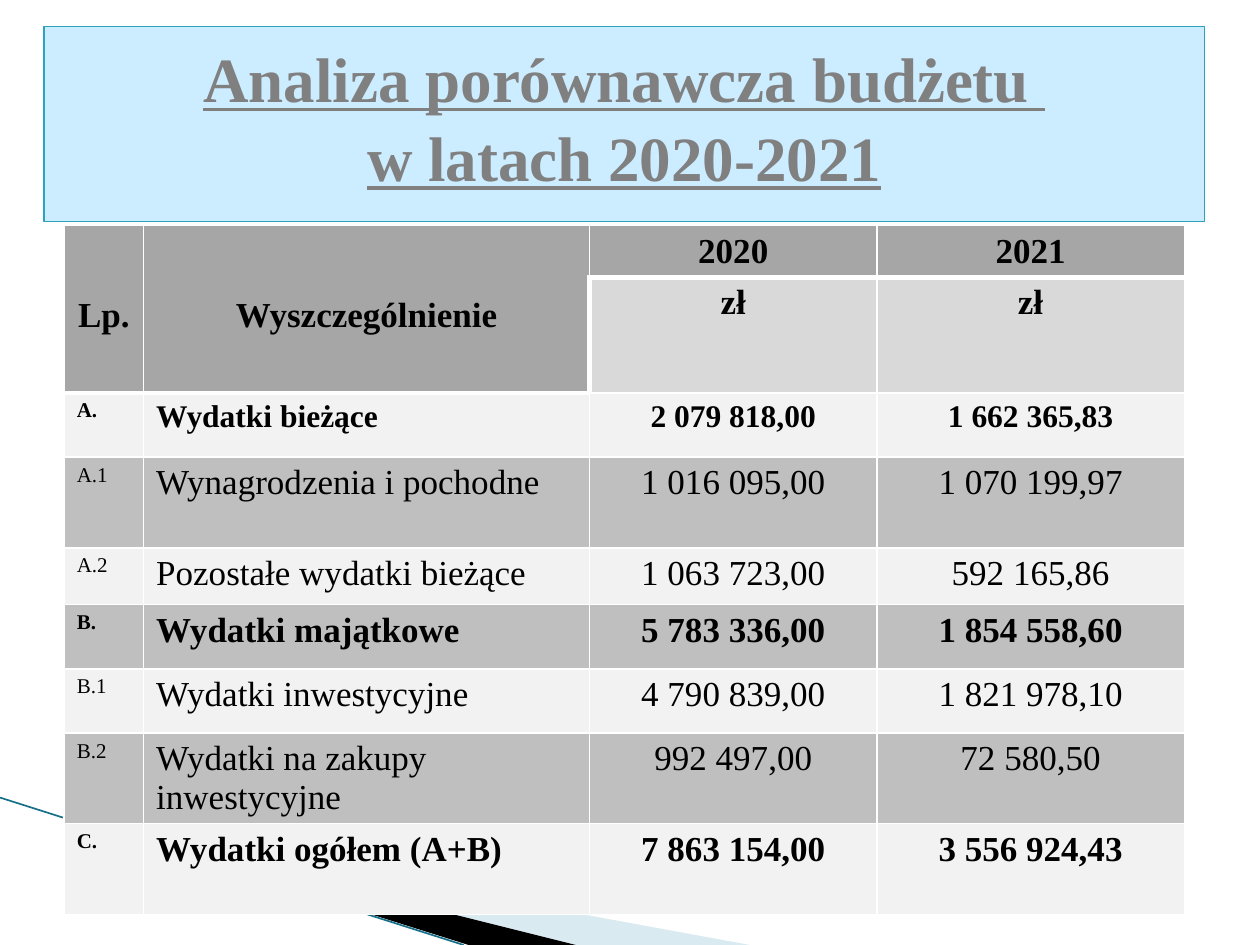
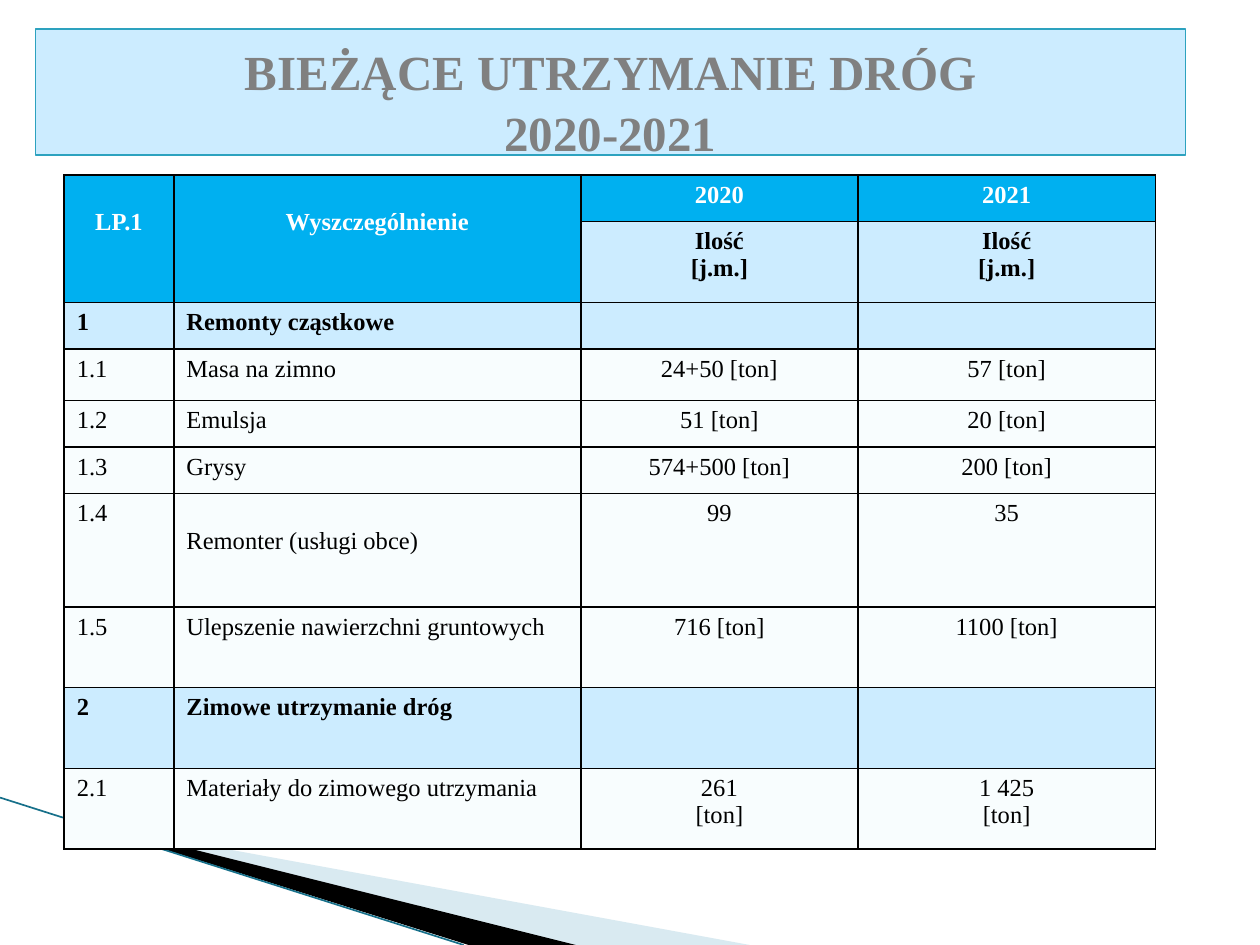
from dataclasses import dataclass
from itertools import product

from lxml import etree
from pptx import Presentation
from pptx.dml.color import RGBColor
from pptx.enum.shapes import MSO_CONNECTOR as CONN, MSO_SHAPE as SHAPE
from pptx.enum.text import MSO_ANCHOR as ANCHOR, PP_ALIGN as ALIGN
from pptx.oxml.ns import qn
from pptx.util import Inches, Pt


@dataclass(frozen=True)
class Theme:
    font: str = "Times New Roman"
    black: str = "000000"
    white: str = "FFFFFF"
    title: str = "808080"
    title_fill: str = "CCECFF"
    title_line: str = "2DA2BF"
    wedge: str = "A0CBDC"
    edge: str = "17708A"
    grey_head: str = "A6A6A6"
    grey_unit: str = "D9D9D9"
    grey_light: str = "F2F2F2"
    grey_dark: str = "BFBFBF"
    blue_head: str = "00B0F0"
    blue_item: str = "F8FDFE"
    budget_title: int = 36
    roads_title: int = 28
    budget: int = 20
    budget_total: int = 18
    budget_number: int = 12
    roads: int = 14


T = Theme()


@dataclass(frozen=True)
class TableStyle:
    head_fill: str
    head_color: str
    unit_fill: str
    size: int
    border: str
    head_rule: float
    head_drop: float


BUDGET = TableStyle(T.grey_head, T.black, T.grey_unit, T.budget, T.white, 3, 0.56)
ROADS = TableStyle(T.blue_head, T.white, T.title_fill, T.roads, T.black, 1, 0.27)

BUDGET_ROWS = [
    ("A.", "Wydatki bieżące", "2 079 818,00", "1 662 365,83"),
    ("A.1", "Wynagrodzenia i pochodne", "1 016 095,00", "1 070 199,97"),
    ("A.2", "Pozostałe wydatki bieżące", "1 063 723,00", "592 165,86"),
    ("B.", "Wydatki majątkowe", "5 783 336,00", "1 854 558,60"),
    ("B.1", "Wydatki inwestycyjne", "4 790 839,00", "1 821 978,10"),
    ("B.2", "Wydatki na zakupy inwestycyjne", "992 497,00", "72 580,50"),
    ("C.", "Wydatki ogółem (A+B)", "7 863 154,00", "3 556 924,43"),
]

ROADS_ROWS = [
    ("1", "Remonty cząstkowe", "", ""),
    ("1.1", "Masa na zimno", "24+50 [ton]", "57 [ton]"),
    ("1.2", "Emulsja", "51 [ton]", "20 [ton]"),
    ("1.3", "Grysy", "574+500 [ton]", "200 [ton]"),
    ("1.4", "Remonter (usługi obce)", "99", "35"),
    ("1.5", "Ulepszenie nawierzchni gruntowych", "716 [ton]", "1100 [ton]"),
    ("2", "Zimowe utrzymanie dróg", "", ""),
    ("2.1", "Materiały do zimowego utrzymania", "261\n[ton]", "1 425\n[ton]"),
]


def rgb(color):
    return RGBColor.from_string(color)


def write(tf, text, *, size, color=T.black, bold=False, underline=False,
          align=ALIGN.LEFT, spacing=None):
    tf.word_wrap = True
    p = tf.paragraphs[0]
    p.alignment = align
    if spacing:
        p.line_spacing = spacing
    if not text:
        p._p.get_or_add_endParaRPr().set("sz", str(size * 100))
        return
    for i, line in enumerate(text.split("\n")):
        if i:
            p.add_line_break()
        r = p.add_run()
        r.text = line
        font = r.font
        font.name, font.size = T.font, Pt(size)
        font.bold, font.underline = bold, underline
        font.color.rgb = rgb(color)


def add_wedge(slide, points, color, alpha=None):
    pts = [(Inches(x), Inches(y)) for x, y in points]
    builder = slide.shapes.build_freeform(*pts[0], scale=1)
    builder.add_line_segments(pts[1:], close=True)
    sp = builder.convert_to_shape()
    sp.shadow.inherit = False
    sp.fill.solid()
    sp.fill.fore_color.rgb = rgb(color)
    sp.line.fill.background()
    if alpha:
        clr = sp._element.spPr.find(qn("a:solidFill"))[0]
        etree.SubElement(clr, qn("a:alpha"), val=str(alpha * 1000))


def add_corner(slide):
    add_wedge(slide, [(0.55, 6.51), (5.95, 7.5), (4.56, 7.5), (0.55, 6.5)], T.wedge, 40)
    add_wedge(slide, [(0.53, 6.49), (4.57, 7.5), (3.72, 7.5), (0.54, 6.5)], T.black)
    line = slide.shapes.add_connector(
        CONN.STRAIGHT, 0, Inches(6.33), Inches(3.68), Inches(7.5))
    line.line.color.rgb = rgb(T.edge)
    line.line.width = Pt(0.95)
    etree.SubElement(line._element.spPr, qn("a:effectLst"))


def add_title(slide, box, text, size, underline=False):
    sp = slide.shapes.add_shape(SHAPE.RECTANGLE, *map(Inches, box))
    sp.shadow.inherit = False
    sp.fill.solid()
    sp.fill.fore_color.rgb = rgb(T.title_fill)
    sp.line.color.rgb = rgb(T.title_line)
    sp.line.width = Pt(0.75)
    tf = sp.text_frame
    tf.vertical_anchor = ANCHOR.TOP
    tf.margin_top = Inches(0.08)
    write(tf, text, size=size, color=T.title, bold=True, underline=underline,
          align=ALIGN.CENTER, spacing=1.04)


def paint_cell(cell, fill, border, widths):
    tcPr = cell._tc.get_or_add_tcPr()
    for side in "LRTB":
        ln = etree.SubElement(tcPr, qn(f"a:ln{side}"), w=str(Pt(widths.get(side, 1))))
        solid = etree.SubElement(ln, qn("a:solidFill"))
        etree.SubElement(solid, qn("a:srgbClr"), val=border)
    cell.fill.solid()
    cell.fill.fore_color.rgb = rgb(fill)


def header_widths(row, col, rule):
    if col < 2:
        widths = {"B": rule}
        if (row, col) == (1, 1):
            widths["R"] = rule
        return widths
    if row == 0:
        return {"B": rule}
    return {"T": rule, "L": rule if col == 2 else 1}


def add_header(table, style, numbers, unit):
    heads = [(numbers, "Wyszczególnienie", "2020", "2021"), ("", "", unit, unit)]
    for row, col in product(range(2), range(4)):
        cell = table.cell(row, col)
        is_unit = row == 1 and col > 1
        write(cell.text_frame, heads[row][col], size=style.size, bold=True,
              color=T.black if is_unit else style.head_color, align=ALIGN.CENTER)
        paint_cell(cell, style.unit_fill if is_unit else style.head_fill,
                   style.border, header_widths(row, col, style.head_rule))
    for col in range(2):
        table.cell(0, col).merge(table.cell(1, col))
        table.cell(0, col).margin_top = Inches(style.head_drop)


def add_table(slide, left, top, cols, heights, style, numbers, unit, rows, look):
    frame = slide.shapes.add_table(
        len(heights), len(cols), Inches(left), Inches(top),
        Inches(sum(cols)), Inches(sum(heights)))
    table = frame.table
    table.first_row = table.horz_banding = False
    for column, width in zip(table.columns, cols):
        column.width = Inches(width)
    for row, height in zip(table.rows, heights):
        row.height = Inches(height)
    add_header(table, style, numbers, unit)
    for i, values in enumerate(rows):
        fill, bold, sizes = look(i, values[0])
        for col, value in enumerate(values):
            cell = table.cell(i + 2, col)
            write(cell.text_frame, value, size=sizes[min(col, 1)], bold=bold,
                  align=ALIGN.CENTER if col > 1 else ALIGN.LEFT)
            widths = {"T": style.head_rule} if i == 0 and col < 2 else {}
            paint_cell(cell, fill, style.border, widths)
    return table


def budget_look(i, number):
    fill = T.grey_dark if i % 2 else T.grey_light
    size = T.budget if i else T.budget_total
    return fill, number.endswith("."), (T.budget_number, size)


def roads_look(i, number):
    section = "." not in number
    return T.title_fill if section else T.blue_item, section, (T.roads, T.roads)


def budget_slide(slide):
    add_corner(slide)
    add_title(slide, (0.35, 0.21, 9.21, 1.55),
              "Analiza porównawcza budżetu \nw latach 2020-2021",
              T.budget_title, underline=True)
    add_table(slide, 0.51, 1.79, (0.63, 3.54, 2.28, 2.44),
              (0.41, 0.89, 0.51, 0.72, 0.45, 0.51, 0.51, 0.72, 0.72),
              BUDGET, "Lp.", "zł", BUDGET_ROWS, budget_look)


def roads_slide(slide):
    add_corner(slide)
    add_title(slide, (0.28, 0.23, 9.13, 1),
              "BIEŻĄCE UTRZYMANIE DRÓG\n2020-2021", T.roads_title)
    table = add_table(slide, 0.51, 1.39, (0.87, 3.23, 2.2, 2.36),
                      (0.37, 0.64, 0.37, 0.41, 0.37, 0.37, 0.9, 0.64, 0.64, 0.64),
                      ROADS, "LP.1", "Ilość\n[j.m.]", ROADS_ROWS, roads_look)
    table.cell(6, 1).margin_top = Inches(ROADS.head_drop)


def main():
    prs = Presentation()
    prs.slide_width, prs.slide_height = Inches(10), Inches(7.5)
    for build in (budget_slide, roads_slide):
        build(prs.slides.add_slide(prs.slide_layouts[6]))
    prs.save("out.pptx")


if __name__ == "__main__":
    main()
